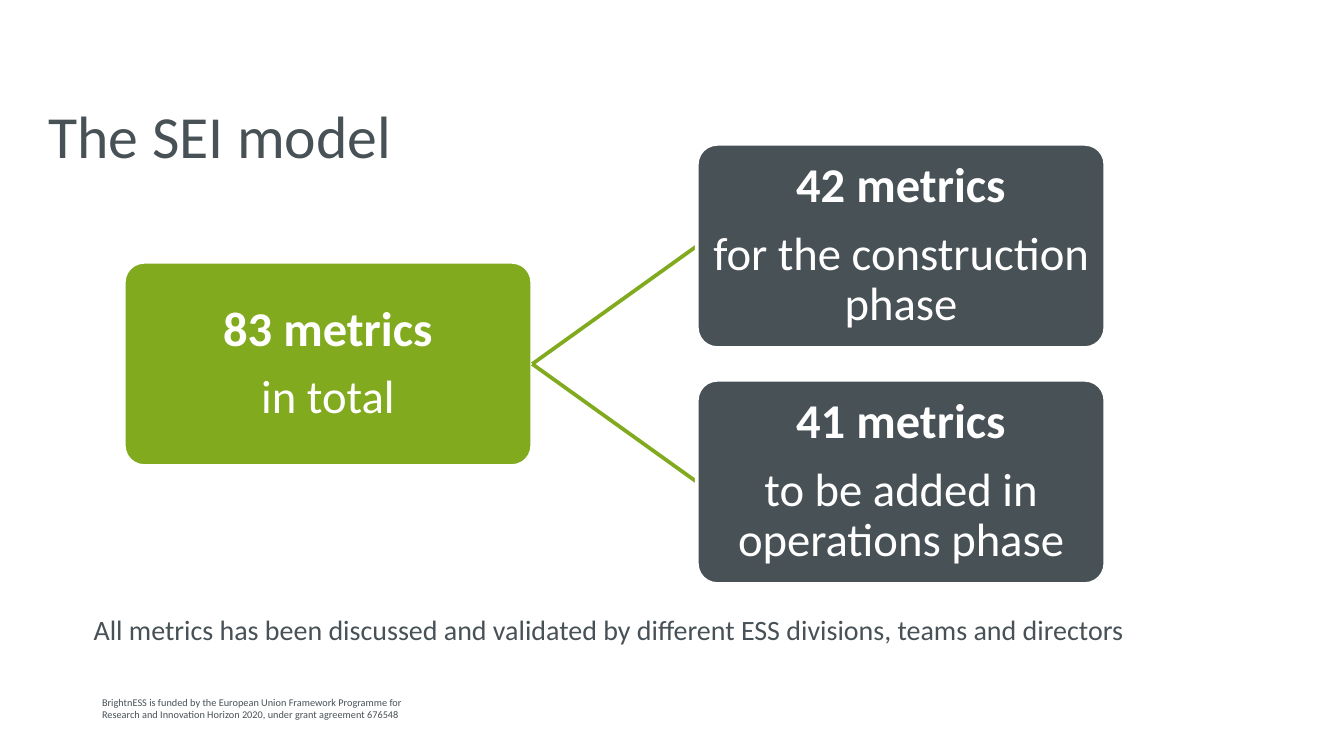
from pptx import Presentation
from pptx import util as u
from pptx.dml.color import RGBColor
from pptx.enum import shapes, text
from pptx.oxml.ns import qn
from lxml import etree

GREEN = RGBColor(0x82, 0xAA, 0x1E)
SLATE = RGBColor(0x48, 0x51, 0x56)
WHITE = RGBColor(0xFF, 0xFF, 0xFF)


class Deck:
    font = "Calibri"
    card_w, card_h = 7.72, 3.86

    def __init__(self):
        self.file = Presentation()
        self.file.slide_width = u.Cm(25.4)
        self.file.slide_height = u.Cm(14.29)
        self.slide = self.file.slides.add_slide(self.file.slide_layouts[5])

    def style(self, para, size, color, bold=False):
        for run in para.runs:
            run.font.name = self.font
            run.font.size = u.Pt(size)
            run.font.color.rgb = color
            run.font.bold = bold

    def title(self, words, x, y, w, h):
        box = self.slide.shapes.title
        box.left, box.top, box.width, box.height = map(u.Cm, (x, y, w, h))
        frame = box.text_frame
        frame.text = words
        frame.vertical_anchor = text.MSO_ANCHOR.MIDDLE
        para = frame.paragraphs[0]
        para.alignment = text.PP_ALIGN.LEFT
        self.style(para, 32, SLATE)

    def note(self, words, x, y, w, h, size):
        box = self.slide.shapes.add_textbox(*map(u.Cm, (x, y, w, h)))
        frame = box.text_frame
        frame.word_wrap = True
        frame.text = words
        for para in frame.paragraphs:
            self.style(para, size, SLATE)

    def card(self, x, y, fill, head, body):
        box = self.slide.shapes.add_shape(
            shapes.MSO_SHAPE.ROUNDED_RECTANGLE,
            *map(u.Cm, (x, y, self.card_w, self.card_h)))
        box.adjustments[0] = 0.1
        box.shadow.inherit = False
        box.fill.solid()
        box.fill.fore_color.rgb = fill
        box.line.color.rgb = WHITE
        box.line.width = u.Pt(2)
        frame = box.text_frame
        frame.word_wrap = True
        frame.vertical_anchor = text.MSO_ANCHOR.MIDDLE
        frame.margin_left = frame.margin_right = u.Cm(0.16)
        frame.margin_top = frame.margin_bottom = u.Cm(0.16)
        frame.text = f"{head}\n{body}"
        for para, size, bold in zip(frame.paragraphs, (26, 25), (True, False)):
            para.alignment = text.PP_ALIGN.CENTER
            para.line_spacing = 0.9
            para.space_after = u.Pt(9)
            self.style(para, size, WHITE, bold)

    def link(self, x1, y1, x2, y2):
        line = self.slide.shapes.add_connector(
            shapes.MSO_CONNECTOR.STRAIGHT, *map(u.Cm, (x1, y1, x2, y2)))
        line.line.color.rgb = GREEN
        line.line.width = u.Pt(2)
        etree.SubElement(line._element.spPr, qn("a:effectLst"))


def main():
    deck = Deck()

    # Title and notes
    deck.title("The SEI model", 0.66, 1.35, 21.56, 2.39)
    deck.note("BrightnESS is funded by the European Union Framework Programme for\n"
              "Research and Innovation Horizon 2020, under grant agreement 676548",
              1.68, 13.03, 6.96, 0.97, 5.5)
    deck.note("All metrics has been discussed and validated by different ESS "
              "divisions, teams and directors", 1.52, 11.45, 21.56, 1.3, 15)

    # Total on the left, one branch above and one below its centre
    left, right, top, shift = 2.34, 13.17, 4.95, 2.23
    deck.card(left, top, GREEN, "83 metrics", "in total")
    mid = top + deck.card_h / 2
    parts = [(-shift, "42 metrics", "for the construction phase"),
             (shift, "41 metrics", "to be added in operations phase")]
    for move, head, body in parts:
        deck.link(left + deck.card_w, mid, right, mid + move)
        deck.card(right, top + move, SLATE, head, body)

    deck.file.save("out.pptx")


if __name__ == "__main__":
    main()
